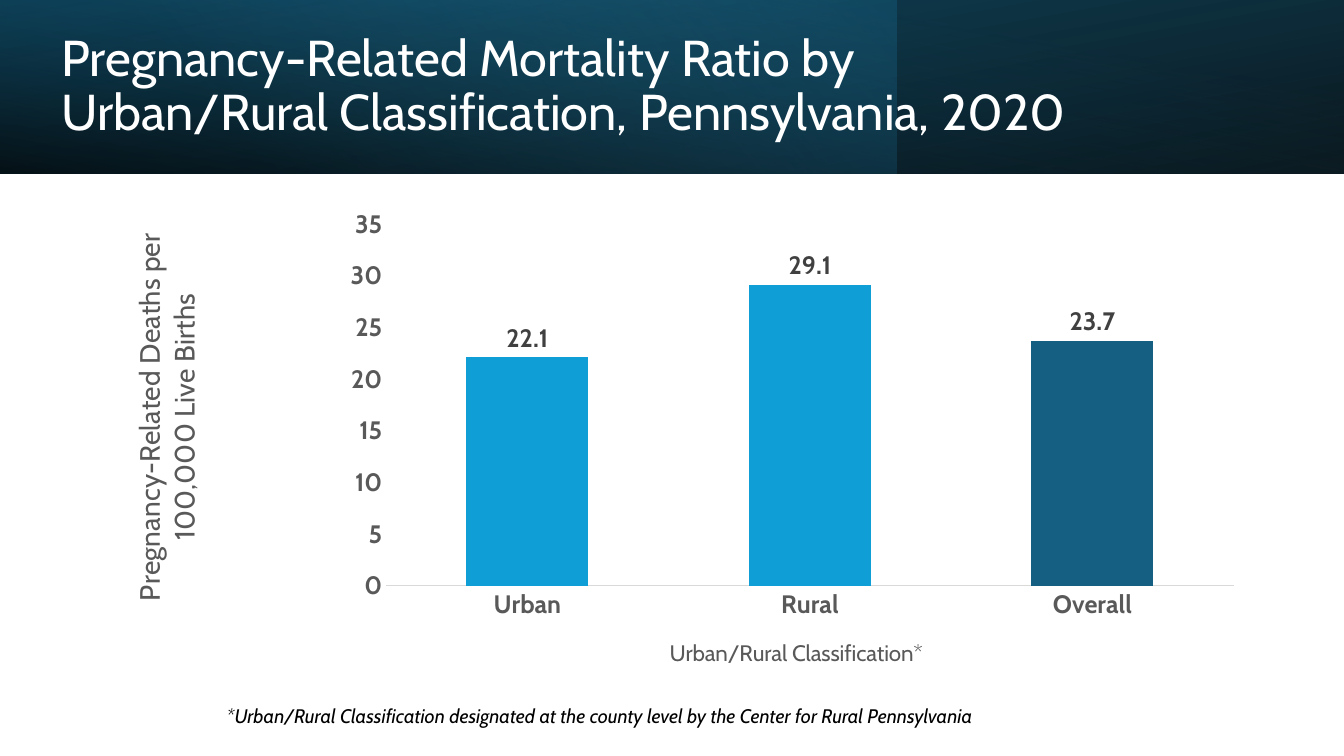
from lxml.etree import SubElement
from pptx import Presentation
from pptx.chart.data import CategoryChartData
from pptx.dml.color import RGBColor
from pptx.enum.chart import XL_CHART_TYPE as ChartType, XL_LABEL_POSITION as LabelPos, XL_TICK_MARK as Tick
from pptx.enum.shapes import MSO_SHAPE as Shape
from pptx.enum.text import MSO_ANCHOR as Anchor
from pptx.oxml import parse_xml
from pptx.oxml.ns import nsdecls, qn
from pptx.util import Inches, Pt

FONT = "Cabin"
TITLE = "Pregnancy-Related Mortality Ratio by\vUrban/Rural Classification, Pennsylvania, 2020"
NOTE = "*Urban/Rural Classification designated at the county level by the Center for Rural Pennsylvania"
X_TITLE = "Urban/Rural Classification*"
Y_TITLE = "Pregnancy-Related Deaths per\n100,000 Live Births"
RATIOS = {"Urban": 22.1, "Rural": 29.1, "Overall": 23.7}
BAR_COLORS = ["0F9ED5", "0F9ED5", "156082"]
BANDS = [
    {"width": 13.33, "rot": 180, "flip": True, "angle": 100,
     "stops": [(0, "000000", 96), (100, "104862", 100)]},
    {"width": 8.89, "rot": 0, "flip": False, "angle": 140,
     "stops": [(0, "156082", 41), (74, "46B1E1", 0)]},
    {"width": 13.33, "rot": 0, "flip": True, "angle": 260,
     "stops": [(0, "000000", 63), (78, "156082", 15)]},
]
BAND_HEIGHT = 1.72


def rgb(color):
    return RGBColor.from_string(color)


def style(font, color, **values):
    font.color.rgb = rgb(color)
    for name, value in {"name": FONT, "bold": False, **values}.items():
        setattr(font, name, value)


def add_band(s, band):
    sp = s.shapes.add_shape(Shape.RECTANGLE, 0, 0, Inches(band["width"]), Inches(BAND_HEIGHT))
    sp.shadow.inherit = False
    sp.line.fill.background()
    sp.rotation = band["rot"]
    sp.fill.gradient()
    grad = sp._element.spPr.find(qn("a:gradFill"))
    stops = grad.find(qn("a:gsLst"))
    for stop in list(stops):
        stops.remove(stop)
    for pos, color, alpha in band["stops"]:
        stop = SubElement(stops, qn("a:gs"), pos=str(pos * 1000))
        clr = SubElement(stop, qn("a:srgbClr"), val=color)
        SubElement(clr, qn("a:alpha"), val=str(alpha * 1000))
    lin = grad.find(qn("a:lin"))
    lin.set("ang", str(band["angle"] * 60000))
    lin.set("scaled", "0")
    if band["flip"]:
        sp._element.spPr.find(qn("a:xfrm")).set("flipH", "1")


def place(element, index, **values):
    for old in element.findall(qn("c:layout")):
        element.remove(old)
    layout = parse_xml(f"<c:layout {nsdecls('c')}><c:manualLayout/></c:layout>")
    for name, value in values.items():
        SubElement(layout[0], qn(f"c:{name}"), val=str(value))
    element.insert(index, layout)


def format_axis(axis, title, size, x, y):
    axis.has_major_gridlines = False
    axis.major_tick_mark = axis.minor_tick_mark = Tick.NONE
    style(axis.tick_labels.font, "595959", size=Pt(18), bold=True)
    tf = axis.axis_title.text_frame
    tf.text = title
    for p in tf.paragraphs:
        for r in p.runs:
            style(r.font, "595959", size=Pt(size))
    place(axis.axis_title._element, 1, xMode="edge", yMode="edge", x=x, y=y)
    return tf


def add_ratio_chart(s):
    data = CategoryChartData(number_format="0.0")
    data.categories = list(RATIOS)
    data.add_series("Series 1", list(RATIOS.values()))
    frame = s.shapes.add_chart(ChartType.COLUMN_CLUSTERED, Inches(0.92), Inches(2),
                               Inches(11.5), Inches(4.76), data)
    chart = frame.chart
    chart.has_legend = chart.has_title = False
    style(chart.font, "000000", size=Pt(10))
    place(chart._chartSpace.chart.plotArea, 0, layoutTarget="inner", xMode="edge",
          yMode="edge", x=0.253, y=0.047, w=0.731, h=0.754)

    plot = chart.plots[0]
    plot.gap_width, plot.overlap, plot.vary_by_categories = 132, -27, False
    series = plot.series[0]
    series.format.fill.solid()
    series.format.fill.fore_color.rgb = rgb(BAR_COLORS[-1])
    for i, color in enumerate(BAR_COLORS):
        fill = series.points[i].format.fill
        fill.solid()
        fill.fore_color.rgb = rgb(color)
    labels = series.data_labels
    for name, value in {"show_value": True, "position": LabelPos.OUTSIDE_END,
                        "number_format": "0.0", "number_format_is_linked": False}.items():
        setattr(labels, name, value)
    style(labels.font, "404040", size=Pt(18), bold=True)

    cat, val = chart.category_axis, chart.value_axis
    format_axis(cat, X_TITLE, 16, 0.494, 0.9)
    cat.format.line.color.rgb = rgb("D9D9D9")
    cat.format.line.width = Pt(0.75)
    tf = format_axis(val, Y_TITLE, 20, 0.03, 0.06)
    body = tf._txBody.find(qn("a:bodyPr"))
    body.set("rot", "-5400000")
    body.set("vert", "horz")
    val.format.line.fill.background()
    val.minimum_scale, val.maximum_scale, val.major_unit = 0, 35, 5
    val.tick_labels.number_format = "0"
    val.tick_labels.number_format_is_linked = False


def add_title(s):
    sp = s.shapes.title
    sp.left, sp.top, sp.width, sp.height = map(Inches, (0.51, 0.23, 11.48, 1.27))
    tf = sp.text_frame
    tf.text = TITLE
    tf.word_wrap = True
    tf.vertical_anchor = Anchor.MIDDLE
    p = tf.paragraphs[0]
    p.alignment = 1
    p.line_spacing = 0.9
    for r in p.runs:
        style(r.font, "FFFFFF", size=Pt(36))
    s.shapes._spTree.append(sp._element)


def add_note(s):
    tf = s.shapes.add_textbox(Inches(2.15), Inches(6.93), Inches(8.17), Inches(0.34)).text_frame
    tf.word_wrap = True
    tf.text = NOTE
    style(tf.paragraphs[0].runs[0].font, "000000", size=Pt(14), italic=True)


def main():
    prs = Presentation()
    prs.slide_width, prs.slide_height = Inches(13.33), Inches(7.5)
    s = prs.slides.add_slide(prs.slide_layouts[5])
    for band in BANDS:
        add_band(s, band)
    add_title(s)
    add_ratio_chart(s)
    add_note(s)
    prs.save("out.pptx")


if __name__ == "__main__":
    main()
